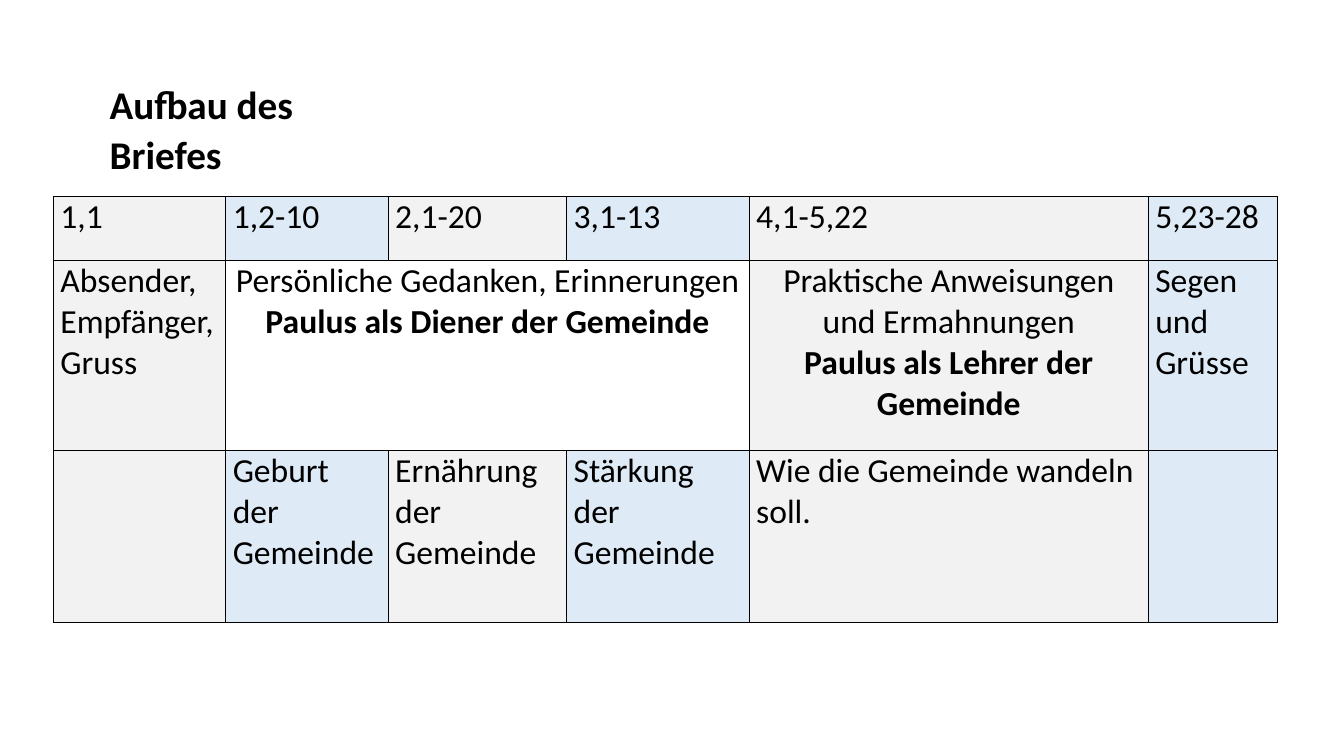
import pptx
import pptx.dml.color
import pptx.enum.text
import pptx.oxml
import pptx.oxml.ns
import pptx.util

Pt = pptx.util.Pt
ALIGN = pptx.enum.text.PP_ALIGN
GREY, BLUE = "F2F2F2", "DEEAF6"


def color(hex_value):
    return pptx.dml.color.RGBColor.from_string(hex_value)


def set_all(target, values):
    for name, value in values.items():
        setattr(target, name, value)


class LetterSlide:
    font = "Calibri"
    ink = "000000"
    border_width = 1

    def __init__(self, deck):
        self.slide = deck.slides.add_slide(deck.slide_layouts[6])

    def add_words(self, paragraph, text, size, bold=False):
        run = paragraph.add_run()
        run.text = text
        set_all(run.font, {"name": self.font, "size": Pt(size), "bold": bold})
        run.font.color.rgb = color(self.ink)

    def heading(self, text, left, top, width, height, size):
        frame = self.slide.shapes.add_textbox(
            Pt(left), Pt(top), Pt(width), Pt(height)).text_frame
        set_all(frame, {"word_wrap": True,
                        "auto_size": pptx.enum.text.MSO_AUTO_SIZE.SHAPE_TO_FIT_TEXT})
        paragraph = frame.paragraphs[0]
        set_all(paragraph, {"line_spacing": 1.07, "space_before": Pt(12)})
        self.add_words(paragraph, text, size, bold=True)

    def outline(self, cell):
        properties = cell._tc.get_or_add_tcPr()
        for side in "LRTB":
            properties.append(pptx.oxml.parse_xml(
                f'<a:ln{side} {pptx.oxml.ns.nsdecls("a")} w="{Pt(self.border_width)}">'
                f'<a:solidFill><a:srgbClr val="{self.ink}"/></a:solidFill></a:ln{side}>'))

    def grid(self, left, top, widths, heights):
        """Add an empty table with outlined cells and alternating column fills."""
        table = self.slide.shapes.add_table(
            len(heights), len(widths), Pt(left), Pt(top),
            Pt(sum(widths)), Pt(sum(heights))).table
        set_all(table, {"first_row": False, "horz_banding": False})
        for column, width in zip(table.columns, widths):
            column.width = Pt(width)
        for row, height in zip(table.rows, heights):
            row.height = Pt(height)
            for index, cell in enumerate(row.cells):
                set_all(cell, {"margin_left": Pt(5), "margin_right": Pt(5),
                               "margin_top": 0, "margin_bottom": 0})
                self.outline(cell)
                cell.fill.solid()
                cell.fill.fore_color.rgb = color(BLUE if index % 2 else GREY)
        return table

    def fill_cell(self, cell, text, size, role=None):
        """Enter the text; a role makes it centred with a bold second paragraph."""
        frame = cell.text_frame
        self.add_words(frame.paragraphs[0], text, size)
        if role:
            self.add_words(frame.add_paragraph(), role, size, bold=True)
            for paragraph in frame.paragraphs:
                paragraph.alignment = ALIGN.CENTER


def main():
    deck = pptx.Presentation()
    set_all(deck, {"slide_width": Pt(960), "slide_height": Pt(540)})
    letter = LetterSlide(deck)
    letter.heading("Aufbau des Briefes", 71.3, 51.1, 223.2, 41.8, 28)

    outline = letter.grid(38.2, 140.5, [123.1, 116, 127.5, 130.4, 285.1, 92.2],
                          [45.4, 136.1, 122.4])
    thoughts = outline.cell(1, 1)
    thoughts.merge(outline.cell(1, 3))
    thoughts.fill.background()

    sections = [
        [("1,1",), ("1,2-10",), ("2,1-20",), ("3,1-13",), ("4,1-5,22",), ("5,23-28",)],
        [("Absender, Empfänger, Gruss",),
         ("Persönliche Gedanken, Erinnerungen", "Paulus als Diener der Gemeinde"),
         None, None,
         ("Praktische Anweisungen und Ermahnungen", "Paulus als Lehrer der Gemeinde"),
         ("Segen und Grüsse",)],
        [None, ("Geburt der Gemeinde",), ("Ernährung der Gemeinde",),
         ("Stärkung der Gemeinde",), ("Wie die Gemeinde wandeln soll.",), None],
    ]
    for row, entries in zip(outline.rows, sections):
        for cell, entry in zip(row.cells, entries):
            if entry:
                text, *role = entry
                letter.fill_cell(cell, text, 24, *role)

    deck.save("out.pptx")


if __name__ == "__main__":
    main()
